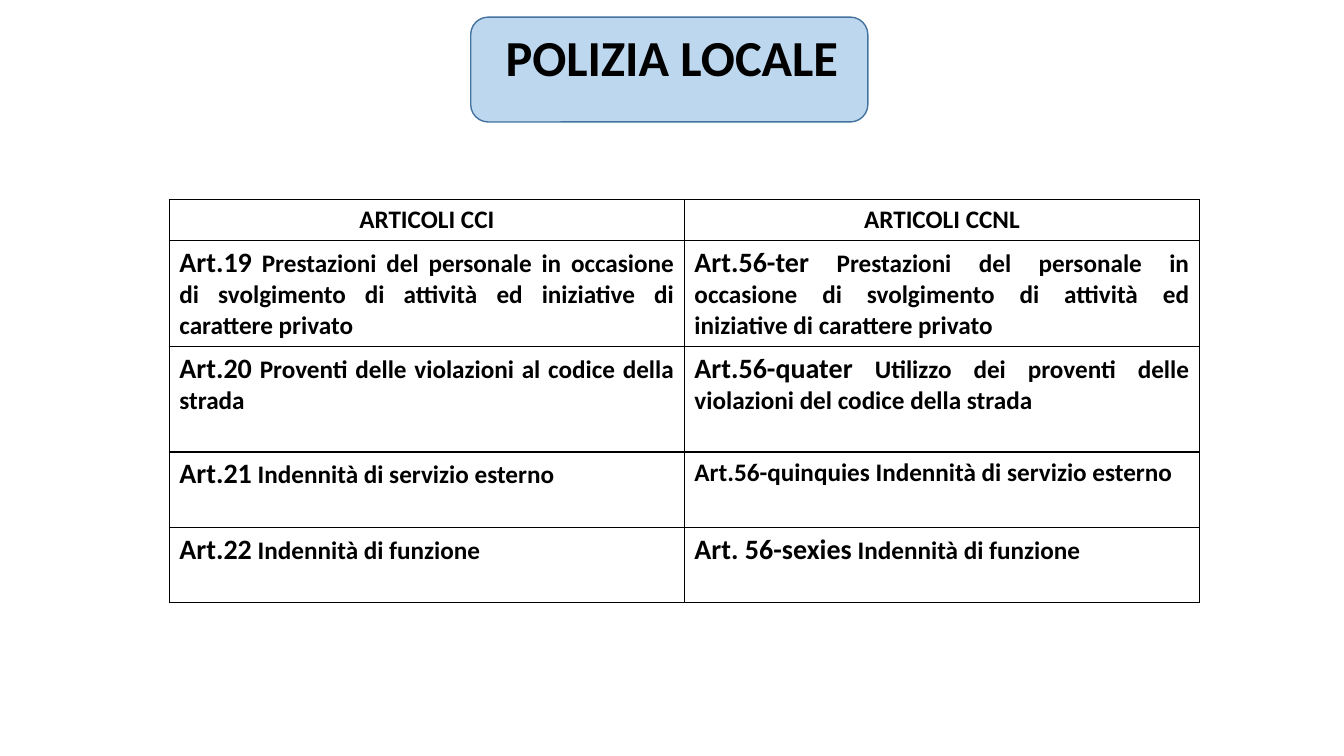
from dataclasses import dataclass

import lxml.etree
import pptx
import pptx.dml.color
import pptx.enum.shapes
import pptx.enum.text
import pptx.oxml.ns
import pptx.slide
import pptx.table
import pptx.text.text
import pptx.util

COLORS = {"text": "000000", "border": "000000", "box": "BDD7EE", "box_line": "43739E"}
FONT = "Calibri"
ALIGN = pptx.enum.text.PP_ALIGN
COLUMN_WIDTH = 367.92


@dataclass
class Article:
    number: str
    subject: str
    number_size: float = 20


@dataclass
class ArticleRow:
    height: float
    alignment: ALIGN
    cci: Article
    ccnl: Article


ON_DUTY = "Prestazioni del personale in occasione di svolgimento di attività ed iniziative di carattere privato"
OUTDOOR = "Indennità di servizio esterno"
FUNCTION = "Indennità di funzione"

ROWS = [
    ArticleRow(29.3, ALIGN.CENTER, Article("ARTICOLI CCI", "", 18), Article("ARTICOLI CCNL", "", 18)),
    ArticleRow(75.6, ALIGN.JUSTIFY, Article("Art.19", ON_DUTY), Article("Art.56-ter", ON_DUTY)),
    ArticleRow(75.6, ALIGN.JUSTIFY,
               Article("Art.20", "Proventi delle violazioni al codice della strada"),
               Article("Art.56-quater", "Utilizzo dei proventi delle violazioni del codice della strada")),
    ArticleRow(53.7, ALIGN.LEFT, Article("Art.21", OUTDOOR), Article("Art.56-quinquies", OUTDOOR, 18)),
    ArticleRow(53.7, ALIGN.LEFT, Article("Art.22", FUNCTION), Article("Art. 56-sexies", FUNCTION)),
]


def color(name: str) -> pptx.dml.color.RGBColor:
    return pptx.dml.color.RGBColor.from_string(COLORS[name])


def format_run(run: pptx.text.text._Run, size: float) -> None:
    run.font.name = FONT
    run.font.size = pptx.util.Pt(size)
    run.font.bold = True
    run.font.color.rgb = color("text")


def add_title(slide: pptx.slide.Slide) -> None:
    box = slide.shapes.add_shape(
        pptx.enum.shapes.MSO_SHAPE.ROUNDED_RECTANGLE,
        pptx.util.Pt(336.24), pptx.util.Pt(12.24), pptx.util.Pt(283.68), pptx.util.Pt(74.88))
    box.shadow.inherit = False
    box.fill.solid()
    box.fill.fore_color.rgb = color("box")
    box.line.color.rgb = color("box_line")
    box.line.width = pptx.util.Pt(1)

    title = slide.shapes.title
    box.element.addnext(title.element)  # the title lies in front of its box
    title.left, title.top = pptx.util.Pt(120), pptx.util.Pt(19.44)
    title.width, title.height = pptx.util.Pt(720), pptx.util.Pt(46.8)
    frame = title.text_frame
    frame.text = "POLIZIA LOCALE"
    frame.auto_size = pptx.enum.text.MSO_AUTO_SIZE.NONE
    frame.vertical_anchor = pptx.enum.text.MSO_ANCHOR.BOTTOM
    paragraph = frame.paragraphs[0]
    paragraph.alignment = ALIGN.CENTER
    paragraph.line_spacing = 0.9
    format_run(paragraph.runs[0], 36)


def add_borders(cell: pptx.table._Cell) -> None:
    qualified = pptx.oxml.ns.qn
    properties = cell._tc.get_or_add_tcPr()
    for side in ("lnL", "lnR", "lnT", "lnB"):
        line = lxml.etree.SubElement(properties, qualified(f"a:{side}"), w=str(pptx.util.Pt(1)))
        fill = lxml.etree.SubElement(line, qualified("a:solidFill"))
        lxml.etree.SubElement(fill, qualified("a:srgbClr"), val=COLORS["border"])


def fill_cell(cell: pptx.table._Cell, article: Article, alignment: ALIGN) -> None:
    add_borders(cell)
    cell.fill.background()
    paragraph = cell.text_frame.paragraphs[0]
    paragraph.text = article.number
    paragraph.alignment = alignment
    format_run(paragraph.runs[0], article.number_size)
    if article.subject:
        subject_run = paragraph.add_run()
        subject_run.text = f" {article.subject}"
        format_run(subject_run, 18)


def add_article_table(slide: pptx.slide.Slide) -> None:
    table = slide.shapes.add_table(
        len(ROWS), 2, pptx.util.Pt(120.96), pptx.util.Pt(142.4),
        pptx.util.Pt(2 * COLUMN_WIDTH), pptx.util.Pt(sum(row.height for row in ROWS))).table
    table.first_row = False
    table.horz_banding = False
    for column in table.columns:
        column.width = pptx.util.Pt(COLUMN_WIDTH)
    for index, row in enumerate(ROWS):
        table.rows[index].height = pptx.util.Pt(row.height)
        for column_index, article in enumerate((row.cci, row.ccnl)):
            fill_cell(table.cell(index, column_index), article, row.alignment)


def main() -> None:
    presentation = pptx.Presentation()
    presentation.slide_width = pptx.util.Pt(960)
    presentation.slide_height = pptx.util.Pt(540)
    slide = presentation.slides.add_slide(presentation.slide_layouts[5])

    # Heading in its rounded box
    add_title(slide)
    # Matching articles of the two agreements
    add_article_table(slide)

    presentation.save("out.pptx")


if __name__ == "__main__":
    main()
